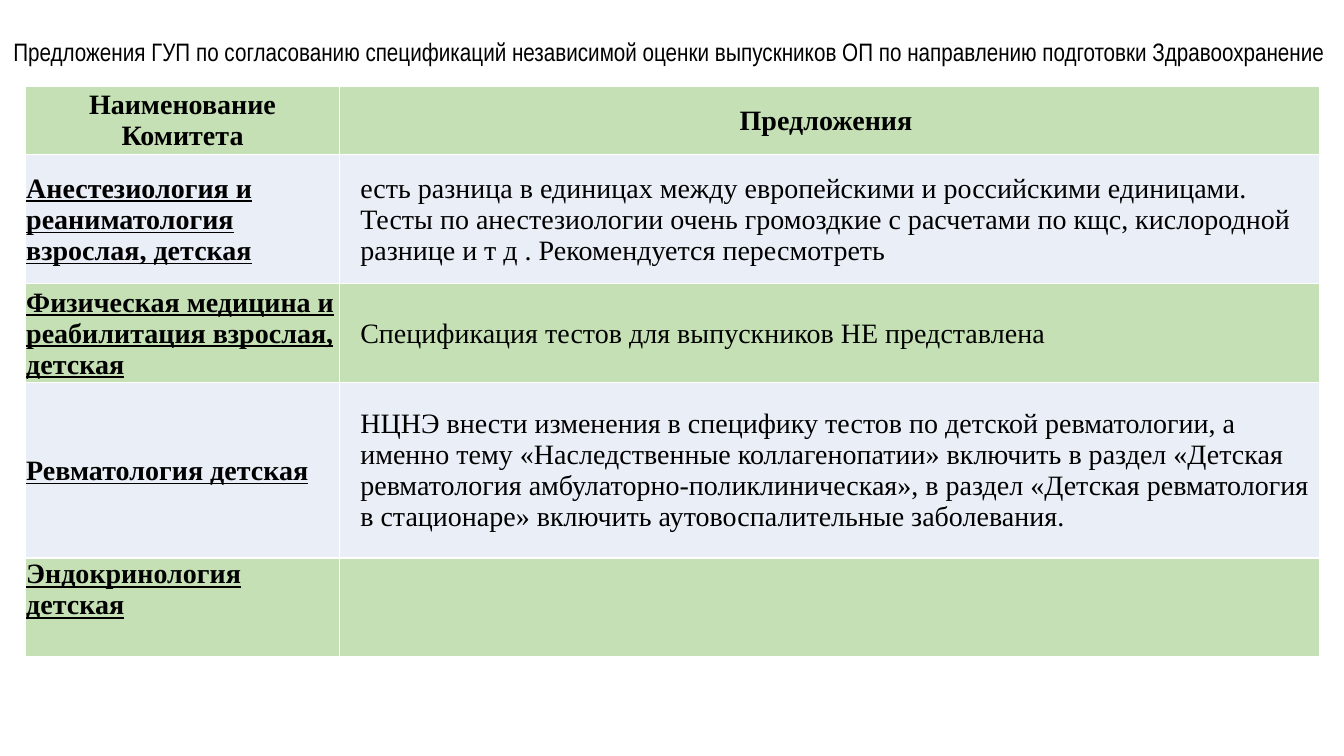
from dataclasses import dataclass

from lxml import etree
from pptx import Presentation
from pptx import util as u
from pptx.dml import color
from pptx.enum import text
from pptx.oxml import ns


@dataclass(frozen=True)
class Theme:
    ink: str = "000000"
    green: str = "C5E0B4"
    blue: str = "EAEFF7"
    border: str = "FFFFFF"
    title_font: str = "Arial Narrow"
    body_font: str = "Times New Roman"
    title_size: int = 18
    body_size: int = 20


HEADER = ("Наименование Комитета", "Предложения ")
PROPOSALS = [
    ("Анестезиология и реаниматология взрослая, детская",
     "есть разница в единицах между европейскими и российскими единицами. "
     "Тесты по анестезиологии очень громоздкие с расчетами по кщс, кислородной "
     "разнице и т д . Рекомендуется пересмотреть"),
    ("Физическая медицина и реабилитация взрослая, детская",
     "Спецификация тестов для выпускников НЕ представлена"),
    ("Ревматология детская",
     "НЦНЭ внести изменения в специфику тестов по детской ревматологии, а именно "
     "тему «Наследственные коллагенопатии» включить в раздел «Детская ревматология "
     "амбулаторно-поликлиническая», в раздел «Детская ревматология в стационаре» "
     "включить аутовоспалительные заболевания."),
    ("Эндокринология детская", ""),
]
COLUMN_WIDTHS = (7.92, 24.69)
ROW_HEIGHTS = (1.73, 3.25, 2.49, 4.42, 2.49)


class SlideBuilder:
    def __init__(self, prs, theme):
        self.theme = theme
        self.s = prs.slides.add_slide(prs.slide_layouts[5])

    def run(self, p, words, font, size, bold=False, underline=False):
        r = p.add_run()
        r.text = words
        r.font.name = font
        r.font.size = u.Pt(size)
        r.font.bold = bold
        r.font.underline = underline
        r.font.color.rgb = color.RGBColor.from_string(self.theme.ink)

    def title(self, words, left, top, width, height):
        sp = self.s.shapes.title
        sp.left, sp.top, sp.width, sp.height = map(u.Cm, (left, top, width, height))
        tf = sp.text_frame
        tf.word_wrap = True
        tf.auto_size = text.MSO_AUTO_SIZE.NONE
        tf.vertical_anchor = text.MSO_ANCHOR.MIDDLE
        p = tf.paragraphs[0]
        p.alignment = text.PP_ALIGN.CENTER
        p.line_spacing = 0.9
        self.run(p, words, self.theme.title_font, self.theme.title_size)

    def borders(self, cell):
        tc_pr = cell._tc.get_or_add_tcPr()
        for i, side in enumerate(("lnL", "lnR", "lnT", "lnB")):
            ln = etree.Element(ns.qn(f"a:{side}"), w=str(u.Pt(1)))
            fill = etree.SubElement(ln, ns.qn("a:solidFill"))
            etree.SubElement(fill, ns.qn("a:srgbClr"), val=self.theme.border)
            tc_pr.insert(i, ln)

    def cell(self, cell, words, fill, anchor, align, indent=0, **style):
        cell.fill.solid()
        cell.fill.fore_color.rgb = color.RGBColor.from_string(fill)
        self.borders(cell)
        cell.vertical_anchor = anchor
        cell.margin_left = cell.margin_right = cell.margin_top = u.Cm(0.02)
        cell.margin_bottom = 0
        p = cell.text_frame.paragraphs[0]
        p.alignment = align
        if indent:
            p._p.get_or_add_pPr().set("marL", str(u.Cm(indent)))
        if words:
            self.run(p, words, self.theme.body_font, self.theme.body_size, **style)

    def table(self, header, rows, left, top, widths, heights):
        box = map(u.Cm, (left, top, sum(widths), sum(heights)))
        table = self.s.shapes.add_table(len(heights), len(widths), *box).table
        table.horz_banding = False
        for column, width in zip(table.columns, widths):
            column.width = u.Cm(width)
        for row, height in zip(table.rows, heights):
            row.height = u.Cm(height)
        middle, left_align = text.MSO_ANCHOR.MIDDLE, text.PP_ALIGN.LEFT
        for i, words in enumerate(header):
            self.cell(table.cell(0, i), words, self.theme.green, middle,
                      text.PP_ALIGN.CENTER, bold=True)
        for i, (committee, proposal) in enumerate(rows, 1):
            fill = self.theme.blue if i % 2 else self.theme.green
            anchor = middle if proposal else text.MSO_ANCHOR.TOP
            self.cell(table.cell(i, 0), committee, fill, anchor, left_align,
                      bold=True, underline=True)
            self.cell(table.cell(i, 1), proposal, fill, middle, left_align, indent=0.5)


def main():
    prs = Presentation()
    prs.slide_width, prs.slide_height = u.Cm(33.87), u.Cm(19.05)
    slide = SlideBuilder(prs, Theme())
    slide.title("Предложения ГУП по согласованию спецификаций независимой оценки "
                "выпускников ОП по направлению подготовки Здравоохранение ",
                0, 0.53, 33.87, 1.63)
    slide.table(HEADER, PROPOSALS, 0.64, 2.17, COLUMN_WIDTHS, ROW_HEIGHTS)
    prs.save("out.pptx")


if __name__ == "__main__":
    main()
